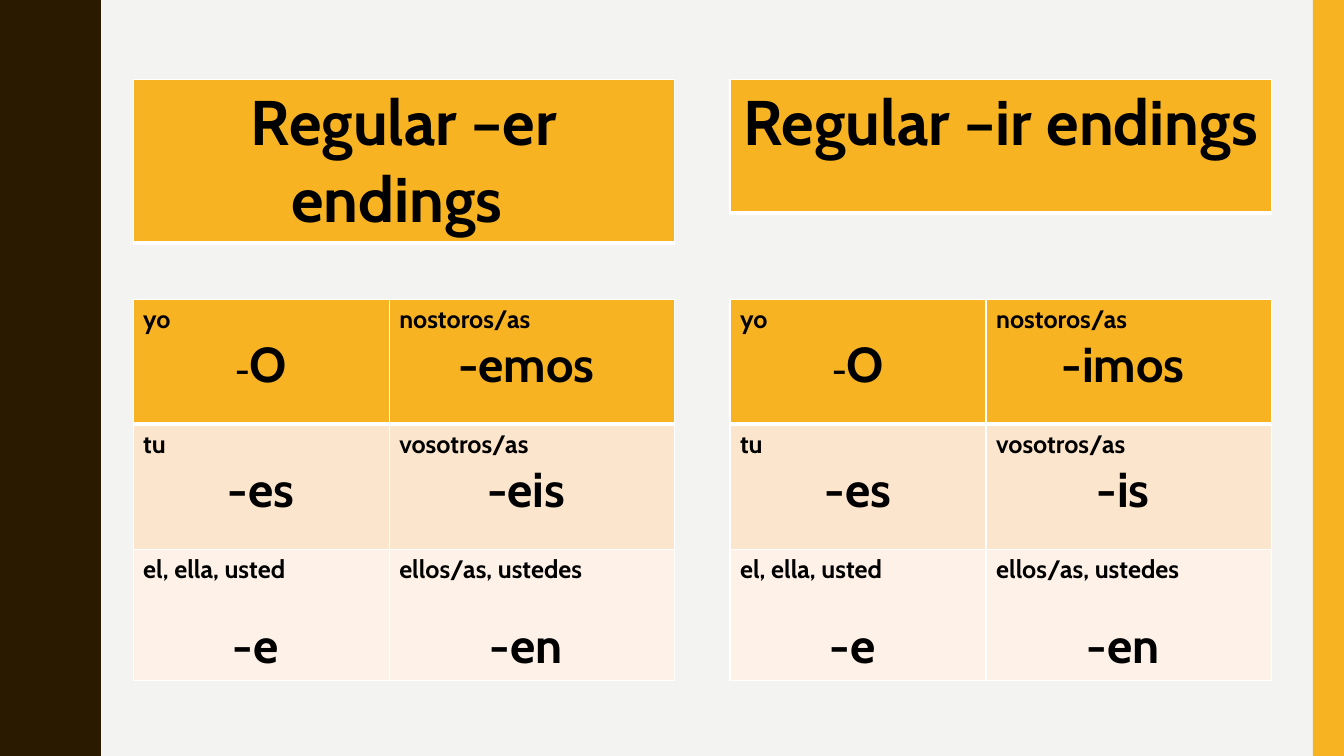
from dataclasses import dataclass

import lxml.etree
import pptx
import pptx.dml.color
import pptx.enum.shapes
import pptx.enum.text
import pptx.oxml.ns
import pptx.util

Inches = pptx.util.Inches
COLORS = {"paper": "F3F3F2", "bark": "2A1A00", "amber": "F8B323", "peach": "FCE5CD",
          "cream": "FEF2E8", "white": "FFFFFF", "black": "000000"}
FONT = "Cabin"
SLIDE_WIDTH, SLIDE_HEIGHT = 13.33, 7.5
TITLE_TOP, TITLE_HEIGHT = 0.79, 1.32
GRID_TOP, ROW_HEIGHT = 2.97, 1.24
COLUMN_WIDTHS = [2.54, 2.83]
ROW_FILLS = ["amber", "peach", "cream"]
PRONOUNS = [("yo", "nostoros/as"), ("tu", "vosotros/as"),
            ("el, ella, usted", "ellos/as, ustedes")]

# Left edge: the wave swings out over half a period, then mirrors back
WAVE_PERIOD = 1.5
HALF_WAVE = [(0.78, 0), (0.78, 0.07), (0.79, 0.14), (0.8, 0.2), (0.81, 0.25), (0.83, 0.29),
             (0.85, 0.33), (0.89, 0.42), (0.93, 0.5), (0.95, 0.55), (0.96, 0.61),
             (0.97, 0.68), (0.97, 0.75)]


@dataclass
class VerbGroup:
    left: float
    title: str
    endings: list[tuple[str, str]]


GROUPS = [
    VerbGroup(1.32, "Regular –er endings ", [("-O", "-emos "), ("-es", "-eis "), ("-e ", "-en ")]),
    VerbGroup(7.24, "Regular –ir endings ", [("-O", "-imos "), ("-es", "-is "), ("-e ", "-en ")]),
]


def rgb(name: str) -> pptx.dml.color.RGBColor:
    return pptx.dml.color.RGBColor.from_string(COLORS[name])


def add_text(para, text: str, *, size: float, centered: bool = False,
             space_before: float = 0) -> None:
    """Append a bold span to a paragraph."""
    if centered:
        para.alignment = pptx.enum.text.PP_ALIGN.CENTER
    para.space_before = pptx.util.Pt(space_before)
    span = para.add_run()
    span.text = text
    span.font.name = FONT
    span.font.size = pptx.util.Pt(size)
    span.font.bold = True
    span.font.color.rgb = rgb("black")


def style_cell(cell, fill: str, *, top: float = 1, bottom: float = 1) -> None:
    """Fill a cell and give it white borders, widths in points."""
    cell.fill.solid()
    cell.fill.fore_color.rgb = rgb(fill)
    properties = cell._tc.get_or_add_tcPr()
    qn = pptx.oxml.ns.qn
    borders = {"a:lnL": 1, "a:lnR": 1, "a:lnT": top, "a:lnB": bottom}
    for index, (tag, width) in enumerate(borders.items()):
        line = lxml.etree.Element(qn(tag), w=str(pptx.util.Pt(width)))
        solid = lxml.etree.SubElement(line, qn("a:solidFill"))
        lxml.etree.SubElement(solid, qn("a:srgbClr"), val=COLORS["white"])
        properties.insert(index, line)


def add_plain_table(page, left: float, top: float, widths: list[float], heights: list[float]):
    frame = page.shapes.add_table(len(heights), len(widths), Inches(left), Inches(top),
                                  Inches(sum(widths)), Inches(sum(heights)))
    table = frame.table
    table.horz_banding = False
    for column, width in zip(table.columns, widths):
        column.width = Inches(width)
    for row, height in zip(table.rows, heights):
        row.height = Inches(height)
    return table


def paint(shape, color: str) -> None:
    shape.fill.solid()
    shape.fill.fore_color.rgb = rgb(color)
    shape.line.fill.background()
    shape.shadow.inherit = False


def draw_edges(page) -> None:
    mirrored = [(x, WAVE_PERIOD - y) for x, y in reversed(HALF_WAVE[:-1])]
    points = [(x, y + period * WAVE_PERIOD)
              for period in range(round(SLIDE_HEIGHT / WAVE_PERIOD))
              for x, y in HALF_WAVE + mirrored]
    builder = page.shapes.build_freeform(0, 0, scale=Inches(1))
    builder.add_line_segments(points + [(0, SLIDE_HEIGHT)], close=True)
    paint(builder.convert_to_shape(), "bark")

    bar = page.shapes.add_shape(pptx.enum.shapes.MSO_SHAPE.RECTANGLE, Inches(13.02), 0,
                                Inches(0.31), Inches(SLIDE_HEIGHT))
    paint(bar, "amber")


def draw_grid(page, group: VerbGroup) -> None:
    table = add_plain_table(page, group.left, GRID_TOP, COLUMN_WIDTHS,
                            [ROW_HEIGHT] * len(PRONOUNS))
    for row, (pronouns, endings) in enumerate(zip(PRONOUNS, group.endings)):
        for column, (pronoun, ending) in enumerate(zip(pronouns, endings)):
            cell = table.cell(row, column)
            style_cell(cell, ROW_FILLS[row], top=3 if row == 1 else 1,
                       bottom=3 if row == 0 else 1)
            add_text(cell.text_frame.paragraphs[0], pronoun, size=18)
            para = cell.text_frame.add_paragraph()
            if ending == "-O":  # smaller hyphen before the capital
                add_text(para, "-", size=25, centered=True)
                ending = "O"
            add_text(para, ending, size=35, centered=True, space_before=22 if row == 2 else 0)


def draw_title(page, group: VerbGroup) -> None:
    table = add_plain_table(page, group.left, TITLE_TOP, [sum(COLUMN_WIDTHS)], [TITLE_HEIGHT])
    cell = table.cell(0, 0)
    style_cell(cell, "amber", bottom=3)
    add_text(cell.text_frame.paragraphs[0], group.title, size=45, centered=True)


def main() -> None:
    deck = pptx.Presentation()
    deck.slide_width, deck.slide_height = Inches(SLIDE_WIDTH), Inches(SLIDE_HEIGHT)
    page = deck.slides.add_slide(deck.slide_layouts[6])
    page.background.fill.solid()
    page.background.fill.fore_color.rgb = rgb("paper")

    draw_edges(page)
    for group in GROUPS:
        draw_grid(page, group)
        draw_title(page, group)
    deck.save("out.pptx")


if __name__ == "__main__":
    main()
